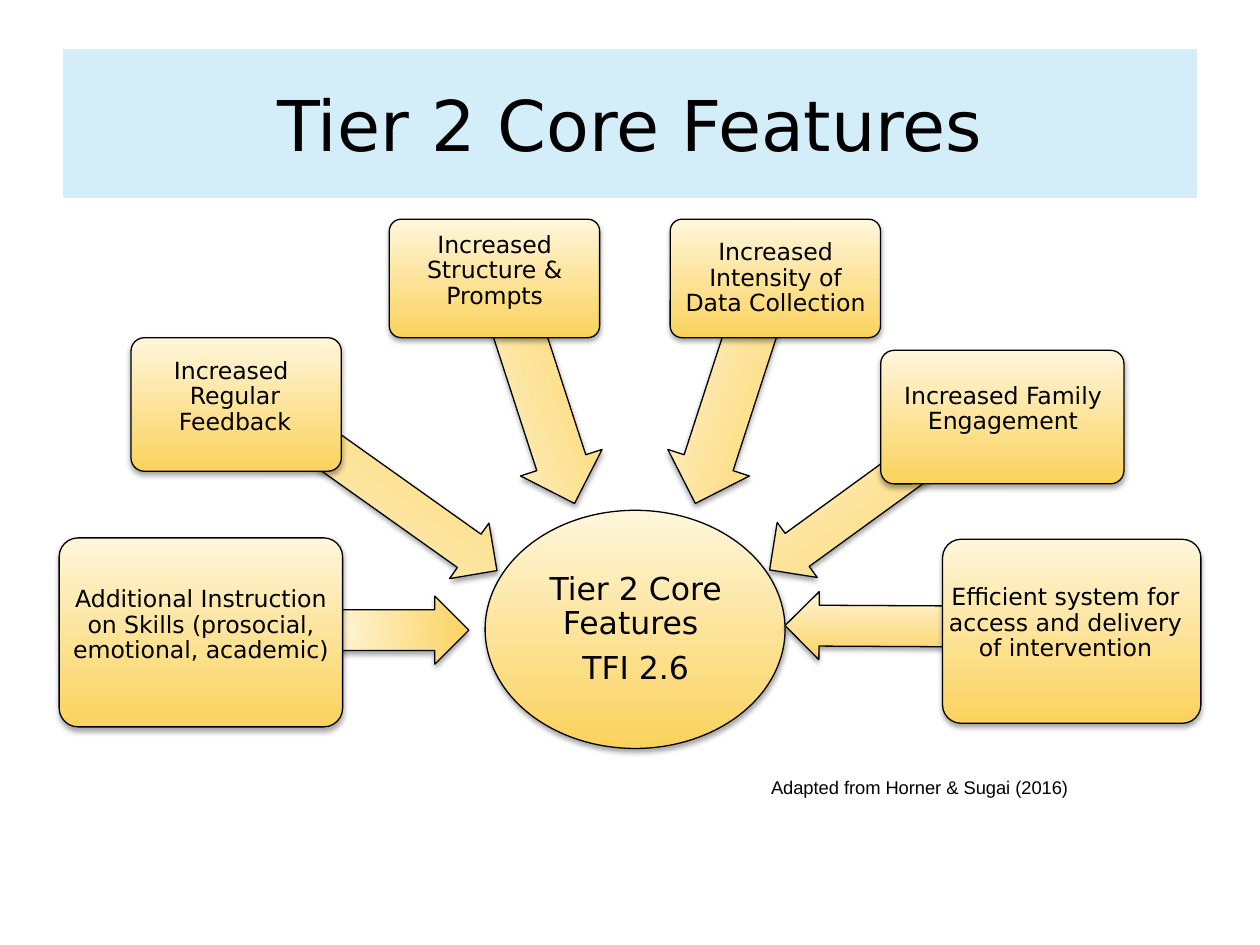
from dataclasses import dataclass

from lxml.etree import SubElement
from pptx import Presentation
from pptx.dml.color import RGBColor
from pptx.enum.shapes import MSO_SHAPE
from pptx.enum.text import MSO_ANCHOR, MSO_AUTO_SIZE, PP_ALIGN
from pptx.oxml.ns import qn
from pptx.util import Pt


@dataclass(frozen=True)
class Theme:
    ink: str = "000000"
    pale_gold: str = "FFF6DB"
    gold: str = "FAD25C"
    banner: str = "7DCCED"
    banner_alpha: int = 33
    heading_font: str = "DejaVu Sans"
    source_font: str = "Arial"
    title_size: float = 40
    hub_size: float = 18
    feature_size: float = 13.5
    source_size: float = 10.5


THEME = Theme()


def write_text(frame, text, size, font=THEME.heading_font, color=THEME.ink,
               align=PP_ALIGN.CENTER, anchor=MSO_ANCHOR.MIDDLE,
               spacing=None, gap=0, insets=(2.9, 2.9)):
    """Fill a text frame; each line of text becomes a paragraph."""
    frame.word_wrap = True
    frame.auto_size = MSO_AUTO_SIZE.NONE
    frame.vertical_anchor = anchor
    frame.margin_left = frame.margin_right = Pt(insets[0])
    frame.margin_top = frame.margin_bottom = Pt(insets[1])
    for index, line in enumerate(text.split("\n")):
        paragraph = frame.paragraphs[0] if index == 0 else frame.add_paragraph()
        paragraph.alignment = align
        paragraph.line_spacing = spacing
        paragraph.space_before = Pt(gap if index else 0)
        run = paragraph.add_run()
        run.text = line
        run.font.name = font
        run.font.size = Pt(size)
        run.font.color.rgb = RGBColor.from_string(color)


class SlideBuilder:
    def __init__(self, slide, theme):
        self.slide = slide
        self.theme = theme
        self.diagram = slide.shapes.add_group_shape().shapes

    def title(self, text, box):
        banner = self.slide.shapes.title
        banner.left, banner.top, banner.width, banner.height = map(Pt, box)
        banner.fill.solid()
        banner.fill.fore_color.rgb = RGBColor.from_string(self.theme.banner)
        color = banner.fill._xPr.find(qn("a:solidFill"))[0]
        SubElement(color, qn("a:alpha"), val=str(self.theme.banner_alpha * 1000))
        write_text(banner.text_frame, text, self.theme.title_size, insets=(5, 3))

    def golden(self, kind, box, adjustments=(), rotation=0, radial=False):
        shape = self.diagram.add_shape(kind, *map(Pt, box))
        shape.rotation = rotation
        for index, value in enumerate(adjustments):
            shape.adjustments[index] = value
        # Gradient from pale to full gold
        shape.fill.gradient()
        shape.fill.gradient_angle = 270
        ends = (self.theme.pale_gold, self.theme.gold)
        for stop, color in zip(shape.fill.gradient_stops, ends):
            stop.color.rgb = RGBColor.from_string(color)
        properties = shape.element.spPr
        if radial:
            gradient = properties.find(qn("a:gradFill"))
            gradient.remove(gradient.find(qn("a:lin")))
            circle = SubElement(gradient, qn("a:path"), path="circle")
            SubElement(circle, qn("a:fillToRect"), l="50000", t="50000",
                       r="50000", b="50000")
        shape.line.color.rgb = RGBColor.from_string(self.theme.ink)
        shape.line.width = Pt(0.75)
        # Soft shadow below
        shape.shadow.inherit = False
        shadow = SubElement(properties.find(qn("a:effectLst")), qn("a:outerShdw"),
                            blurRad=str(Pt(3.1)), dist=str(Pt(1.8)),
                            dir="5400000", rotWithShape="0")
        color = SubElement(shadow, qn("a:srgbClr"), val=self.theme.ink)
        SubElement(color, qn("a:alpha"), val="34000")

    def label(self, text, box, size, **style):
        caption = self.diagram.add_textbox(*map(Pt, box))
        write_text(caption.text_frame, text, size, spacing=0.9, **style)

    def hub(self, text, box, text_box):
        self.golden(MSO_SHAPE.OVAL, box)
        self.label(text, text_box, self.theme.hub_size, gap=6.3, insets=(0.7, 0.7))

    def feature(self, text, box, text_box, arrow, rotation, radial=False):
        self.golden(MSO_SHAPE.LEFT_ARROW, arrow, (0.6, 0.5), rotation, radial)
        self.golden(MSO_SHAPE.ROUNDED_RECTANGLE, box, (0.1,))
        self.label(text, text_box, self.theme.feature_size)

    def source(self, text, box):
        credit = self.slide.shapes.add_textbox(*map(Pt, box))
        write_text(credit.text_frame, text, self.theme.source_size,
                   font=self.theme.source_font, align=PP_ALIGN.LEFT,
                   anchor=MSO_ANCHOR.TOP, insets=(5, 3))


# Text, box, text area, arrow, arrow rotation; clockwise from lower left
FEATURES = [
    ("Additional Instruction on Skills (prosocial, emotional, academic)",
     (33.8, 307.4, 162, 108), (33.8, 299.5, 162, 116),
     (114.5, 340.6, 153.4, 38.9), 180),
    ("Increased \nRegular Feedback",
     (74.9, 193, 120.2, 76.3), (77, 195.1, 114.5, 63.4),
     (117.4, 253.4, 183.6, 38.9), 215.4),
    ("Increased Structure & Prompts",
     (222.5, 125.3, 120.2, 67.7), (225.4, 127.4, 114.5, 55.4),
     (242.6, 200.9, 131, 49), 252),
    ("Increased Intensity of Data Collection",
     (383, 125.3, 120.2, 67.7), (385.9, 127.4, 114.5, 63.4),
     (352.1, 200.9, 131, 49), 288),
    ("Increased Family Engagement",
     (503.3, 200.2, 139, 76.3), (506.2, 202.3, 133.9, 63.4),
     (424.1, 257.8, 164.9, 38.9), 324),
    ("Efficient system for access and delivery of intervention",
     (538.6, 308.2, 147.6, 105.1), (538.6, 311, 140.4, 90.7),
     (448.6, 338.4, 154.8, 38.9), 0.3),
]


def main():
    deck = Presentation()
    deck.slide_width, deck.slide_height = Pt(720), Pt(540)
    builder = SlideBuilder(deck.slides.add_slide(deck.slide_layouts[5]), THEME)

    builder.title("Tier 2 Core Features", (36, 28.1, 648, 85))

    # Hub with the features pointing at it
    builder.hub("Tier 2 Core Features \nTFI 2.6",
                (277.2, 291.6, 171.4, 136.1), (302.4, 311.8, 121.7, 96.5))
    for index, feature in enumerate(FEATURES):
        builder.feature(*feature, radial=index == 0)

    builder.source("Adapted from Horner & Sugai (2016)", (435.6, 440.6, 265, 14.4))
    deck.save("out.pptx")


if __name__ == "__main__":
    main()
